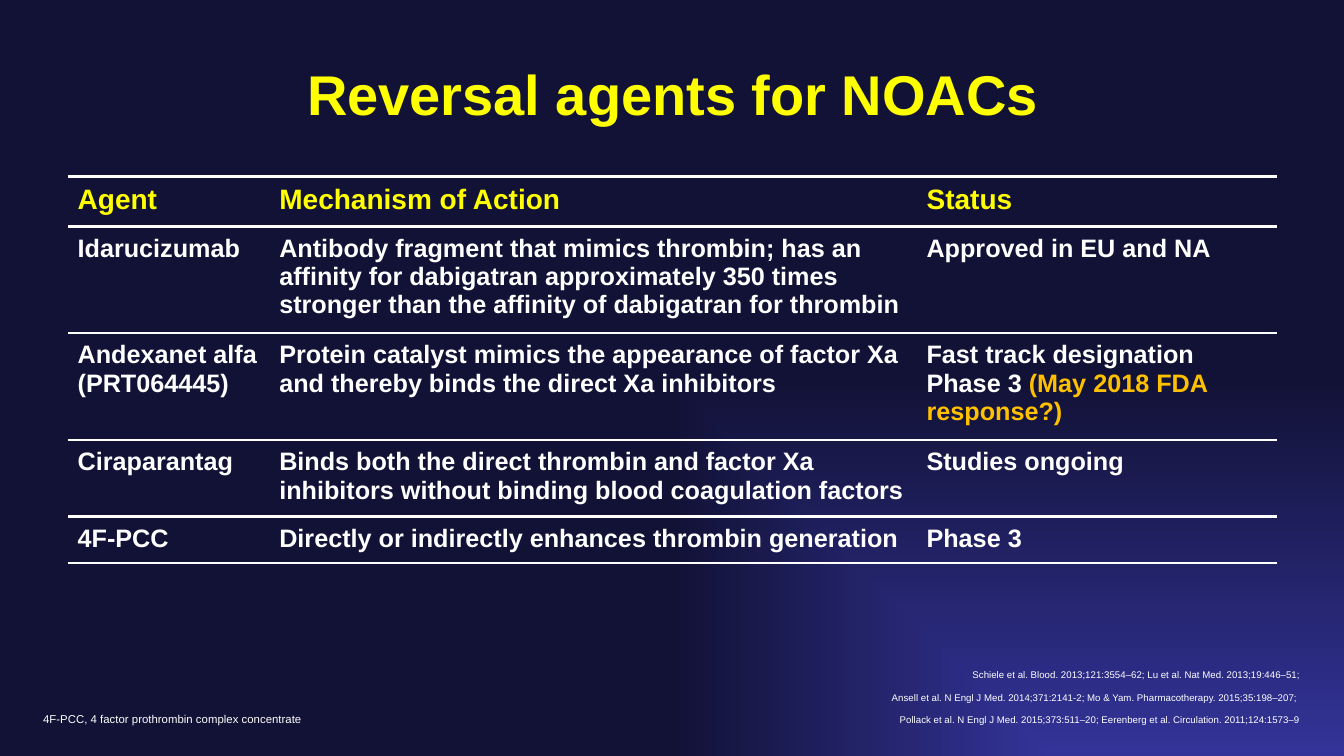
"""Build a slide with a table of reversal agents for NOACs."""
from lxml import etree
from pptx import Presentation
from pptx import util as u
from pptx.dml import color
from pptx.enum import text
from pptx.oxml import ns

YELLOW, WHITE, AMBER = "FFFF00", "FFFFFF", "FFC000"
NO_TABLE_STYLE = "{2D5ABB26-0587-4C30-8999-92F81FD0307C}"


def rgb(value):
    return color.RGBColor.from_string(value)


def add_element(parent, tag, **attributes):
    return etree.SubElement(parent, ns.qn(tag), attributes)


class SlideBuilder:
    def __init__(self, slide, font="Arial"):
        self.slide = slide
        self.font = font

    def background(self, corner, field):
        fill = self.slide.background.fill
        fill.gradient()
        for stop, position, value in zip(fill.gradient_stops, (0, 1), (corner, field)):
            stop.position = position
            stop.color.rgb = rgb(value)
        gradient = self.slide.background._cSld.find(".//" + ns.qn("a:gradFill"))
        gradient.remove(gradient.find(ns.qn("a:lin")))
        shade = add_element(gradient, "a:path", path="rect")
        add_element(shade, "a:fillToRect", l="100000", t="100000")

    def add_text(self, frame, paragraphs, size, value, bold=False, align=None, baseline=None):
        for index, runs in enumerate(paragraphs):
            paragraph = frame.paragraphs[0] if index == 0 else frame.add_paragraph()
            paragraph.alignment = align
            for words, run_color in runs:
                run = paragraph.add_run()
                run.text = words
                style = {"name": self.font, "size": u.Pt(size), "bold": bold}
                for name, setting in style.items():
                    setattr(run.font, name, setting)
                run.font.color.rgb = rgb(run_color or value)
                if baseline:
                    run._r.get_or_add_rPr().set("baseline", str(baseline))

    def text_box(self, box, lines, size, value, anchor, inset=0.1, wrap=True, **style):
        frame = self.slide.shapes.add_textbox(*map(u.Inches, box)).text_frame
        settings = {
            "word_wrap": wrap,
            "vertical_anchor": anchor,
            "margin_left": u.Inches(inset),
            "margin_right": u.Inches(inset),
        }
        for name, setting in settings.items():
            setattr(frame, name, setting)
        self.add_text(frame, [[(line, None)] for line in lines], size, value, **style)

    def border(self, cell, *sides):
        properties = cell._tc.get_or_add_tcPr()
        for side in sides:
            line = add_element(properties, "a:" + side, w=str(u.Pt(2.25)))
            fill = add_element(line, "a:solidFill")
            add_element(fill, "a:srgbClr", val=WHITE)

    def table(self, box, widths, heights, rows):
        frame = self.slide.shapes.add_table(len(rows), len(widths), *map(u.Inches, box))
        table = frame.table
        table._tbl.tblPr.find(ns.qn("a:tableStyleId")).text = NO_TABLE_STYLE
        table.first_row = table.horz_banding = False
        for column, width in zip(table.columns, widths):
            column.width = u.Inches(width)
        for index, (row, height, contents) in enumerate(zip(table.rows, heights, rows)):
            row.height = u.Inches(height)
            size, value = (20, YELLOW) if index == 0 else (18, WHITE)
            for cell, content in zip(row.cells, contents):
                cell.margin_top = cell.margin_bottom = u.Inches(0.08)
                self.border(cell, "lnT", "lnB")
                cell.fill.background()
                paragraphs = [[(content, None)]] if isinstance(content, str) else content
                self.add_text(cell.text_frame, paragraphs, size, value, bold=True)


def main():
    presentation = Presentation()
    presentation.slide_width = u.Inches(13.33)
    presentation.slide_height = u.Inches(7.5)
    builder = SlideBuilder(presentation.slides.add_slide(presentation.slide_layouts[6]))
    builder.background("333399", "121237")
    builder.text_box(
        (0.67, 0.3, 12, 1.25), ["Reversal agents for NOACs"], 40, YELLOW,
        text.MSO_ANCHOR.MIDDLE, inset=0, bold=True, align=text.PP_ALIGN.CENTER,
    )
    andexanet_status = [
        [("Fast track designation", None)],
        [("Phase 3 ", None), ("(May 2018 FDA response?)", AMBER)],
    ]
    agents = [
        ("Agent", "Mechanism of Action", "Status"),
        ("Idarucizumab",
         "Antibody fragment that mimics thrombin; has an affinity for dabigatran "
         "approximately 350 times stronger than the affinity of dabigatran for thrombin",
         "Approved in EU and NA"),
        ("Andexanet alfa (PRT064445)",
         "Protein catalyst mimics the appearance of factor Xa and thereby binds "
         "the direct Xa inhibitors",
         andexanet_status),
        ("Ciraparantag",
         "Binds both the direct thrombin and factor Xa inhibitors without binding "
         "blood coagulation factors",
         "Studies ongoing"),
        ("4F-PCC", "Directly or indirectly enhances thrombin generation", "Phase 3"),
    ]
    builder.table(
        (0.67, 1.75, 12, 3.63), (2, 6.42, 3.58), (0.47, 1, 1, 0.72, 0.44), agents
    )
    references = [
        "Schiele et al. Blood. 2013;121:3554–62; Lu et al. Nat Med. 2013;19:446–51;",
        " Ansell et al. N Engl J Med. 2014;371:2141-2; Mo & Yam. Pharmacotherapy. 2015;35:198–207; ",
        "Pollack et al. N Engl J Med. 2015;373:511–20; Eerenberg et al. Circulation. 2011;124:1573–9",
    ]
    footnote = {"anchor": text.MSO_ANCHOR.BOTTOM, "baseline": -25000}
    builder.text_box(
        (5.58, 6.54, 7.42, 0.71), references, 12, WHITE,
        align=text.PP_ALIGN.RIGHT, **footnote,
    )
    builder.text_box(
        (0.33, 6.91, 4.63, 0.34), ["4F-PCC, 4 factor prothrombin complex concentrate"],
        14, WHITE, wrap=False, **footnote,
    )
    presentation.save("out.pptx")


if __name__ == "__main__":
    main()
